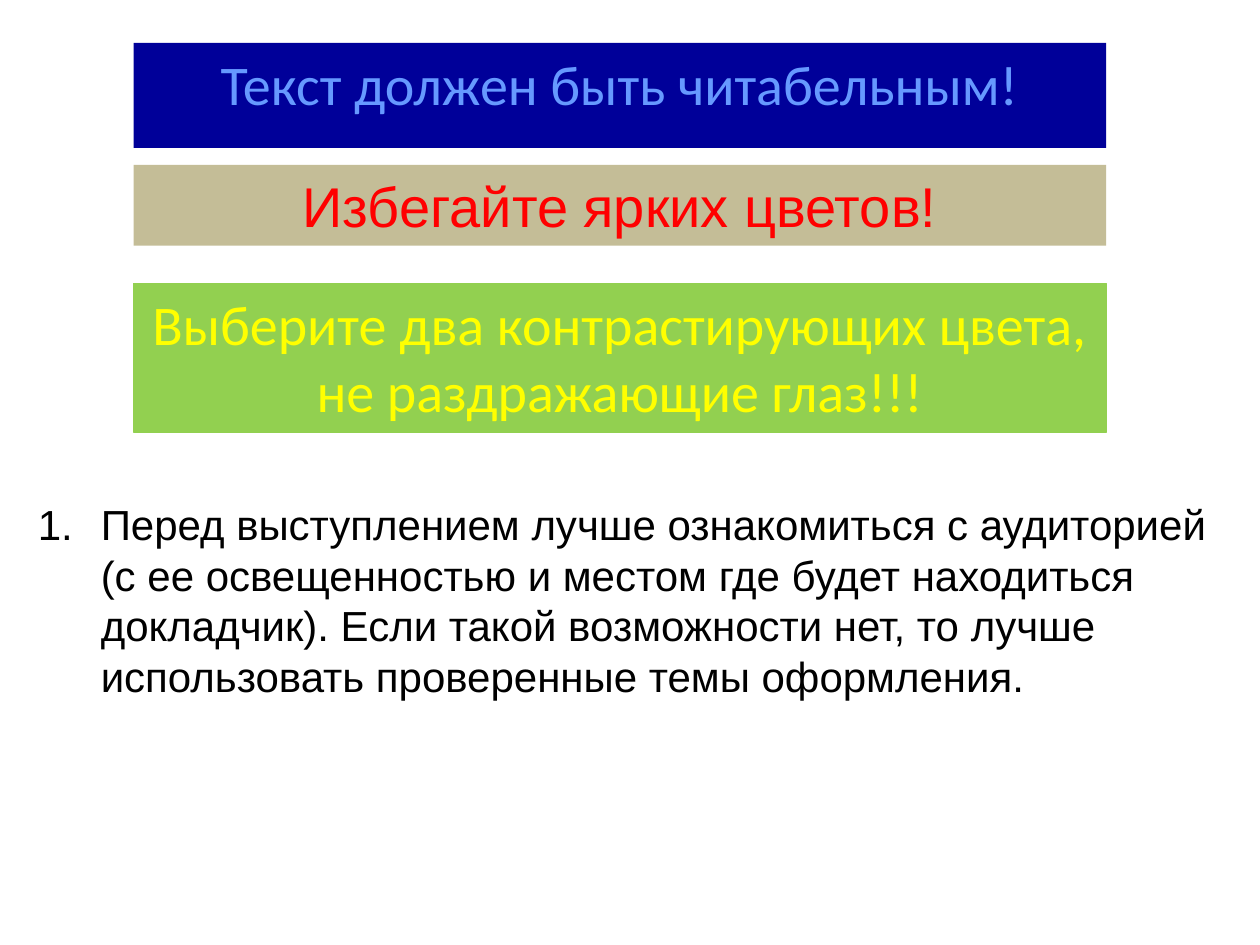
import pptx
import pptx.dml.color
import pptx.enum.shapes
import pptx.enum.text
import pptx.oxml.ns
import pptx.util
import lxml.etree

Inches, Pt = pptx.util.Inches, pptx.util.Pt
ALIGN = pptx.enum.text.PP_ALIGN

BANNER_LEFT, BANNER_WIDTH = 1.06, 7.72
LINE_HEIGHT, TWO_LINE_HEIGHT = 0.64, 1.18


def color(hex_value):
    return pptx.dml.color.RGBColor.from_string(hex_value)


def place(shape, left, top, width, height):
    shape.left, shape.top = Inches(left), Inches(top)
    shape.width, shape.height = Inches(width), Inches(height)


def paint(shape, fill, outline=None):
    shape.fill.solid()
    shape.fill.fore_color.rgb = color(fill)
    if outline:
        shape.line.color.rgb = color(outline)
        shape.line.width = Pt(0.75)
    else:
        shape.line.fill.background()


def write(shape, text, font="Calibri", size=32, ink="000000", align=ALIGN.CENTER):
    frame = shape.text_frame
    frame.word_wrap = True
    frame.auto_size = pptx.enum.text.MSO_AUTO_SIZE.SHAPE_TO_FIT_TEXT
    frame.vertical_anchor = pptx.enum.text.MSO_ANCHOR.TOP
    paragraph = frame.paragraphs[0]
    paragraph.alignment = align
    paragraph.space_before = Pt(0)
    run = paragraph.add_run()
    run.text = text
    run.font.name = font
    run.font.size = Pt(size)
    run.font.color.rgb = color(ink)
    return paragraph


def number(paragraph, indent=0.5):
    """Turn the paragraph into a numbered item with a hanging indent."""
    properties = paragraph._p.get_or_add_pPr()
    properties.set("marL", str(Inches(indent)))
    properties.set("indent", str(-Inches(indent)))
    qn = pptx.oxml.ns.qn
    lxml.etree.SubElement(properties, qn("a:buFont"), typeface="Arial")
    lxml.etree.SubElement(properties, qn("a:buAutoNum"), type="arabicPeriod")


def add_banner(slide, top, height, text, fill, outline=None, **text_format):
    banner = slide.shapes.add_shape(
        pptx.enum.shapes.MSO_SHAPE.RECTANGLE,
        Inches(BANNER_LEFT), Inches(top), Inches(BANNER_WIDTH), Inches(height))
    banner.shadow.inherit = False
    paint(banner, fill, outline)
    write(banner, text, **text_format)


def main():
    deck = pptx.Presentation()
    deck.slide_width, deck.slide_height = Inches(10), Inches(7.5)
    slide = deck.slides.add_slide(deck.slide_layouts[1])

    heading = slide.shapes.title
    place(heading, BANNER_LEFT, 0.34, BANNER_WIDTH, LINE_HEIGHT)
    paint(heading, "000099")
    write(heading, "Текст должен быть читабельным!", ink="6699FF")

    add_banner(slide, 1.31, LINE_HEIGHT, "Избегайте ярких цветов!",
               "C4BD97", font="Arial", ink="FF0000")
    add_banner(slide, 2.25, TWO_LINE_HEIGHT,
               "Выберите два контрастирующих цвета, не раздражающие глаз!!!",
               "92D050", outline="92D050", ink="FFFF00")

    advice = slide.placeholders[1]
    place(advice, 0.2, 3.91, 9.53, 1.72)
    paint(advice, "FFFFFF")
    number(write(
        advice,
        "Перед выступлением лучше ознакомиться с аудиторией "
        "(с ее освещенностью и местом где будет находиться докладчик). "
        "Если такой возможности нет, то лучше использовать "
        "проверенные темы оформления.",
        font="Arial", size=24, align=ALIGN.LEFT))

    deck.save("out.pptx")


if __name__ == "__main__":
    main()
